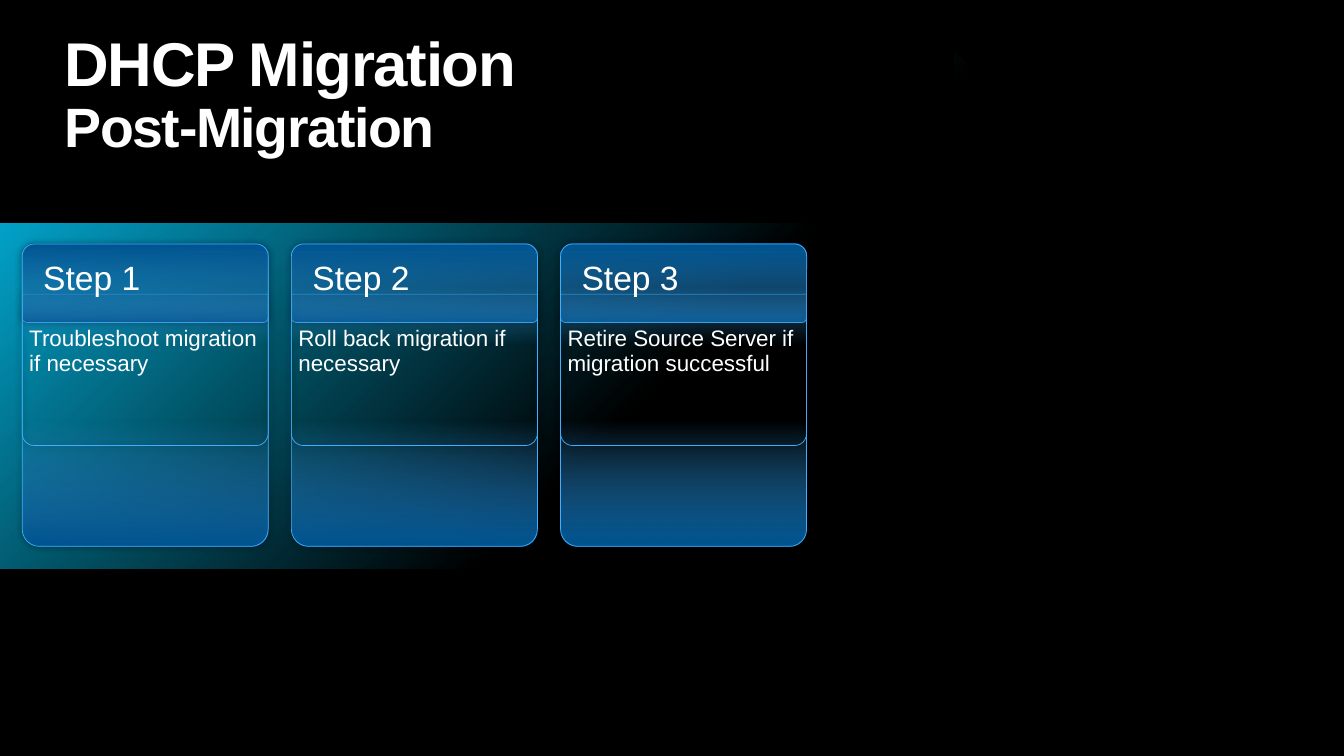
from lxml import etree
from pptx import Presentation
from pptx.dml.color import RGBColor
from pptx.enum.shapes import MSO_SHAPE as Shape
from pptx.enum.text import MSO_ANCHOR as Anchor
from pptx.oxml import parse_xml
from pptx.oxml.ns import nsdecls
from pptx.util import Inches, Pt

FONT = "Arial"
WHITE, BLACK, CYAN = "FFFFFF", "000000", "03C2F1"
SAND, SKY, NAVY = "FFD8A0", "40AFFF", "005490"
# Gradient stops: position in percent, colour, opacity in percent
ARROW_STOPS = [(0, BLACK, 100), (50, BLACK, 100), (100, CYAN, 100)]
GLASS_STOPS = [(0, SAND, 0), (50, SKY, 0), (100, NAVY, 100)]

STEPS = [
    ("Step 1", "Troubleshoot migration if necessary"),
    ("Step 2", "Roll back migration if necessary"),
    ("Step 3", "Retire Source Server if migration successful"),
]
CARD_LEFT, CARD_PITCH, CARD_WIDTH = 0.22, 2.67, 2.44
# Layers of a card: shape, top, height, corner, gradient angle
CARD_LAYERS = [
    (Shape.ROUND_2_SAME_RECTANGLE, 2.5, 0.7, 0.07, 270),
    (Shape.ROUND_2_SAME_RECTANGLE, 2.92, 2.5, 0.07, 270),
    (Shape.ROUNDED_RECTANGLE, 2.42, 2, 0.06, 90),
]


def rgb(value):
    return RGBColor.from_string(value)


def fill_gradient(shape, stops, angle):
    stop_xml = "".join(
        f'<a:gs pos="{pos * 1000}"><a:srgbClr val="{color}">'
        f'<a:alpha val="{opacity * 1000}"/></a:srgbClr></a:gs>'
        for pos, color, opacity in stops)
    gradient = parse_xml(
        f'<a:gradFill {nsdecls("a")} rotWithShape="1"><a:gsLst>{stop_xml}</a:gsLst>'
        f'<a:lin ang="{angle * 60000}" scaled="0"/></a:gradFill>')
    shape._element.spPr.find(".//{*}prstGeom").addnext(gradient)


def add_glow_shadow(shape):
    effects = shape._element.spPr.find("{*}effectLst")
    effects.append(parse_xml(
        f'<a:outerShdw {nsdecls("a")} blurRad="{Pt(5)}" dist="0" dir="0">'
        f'<a:srgbClr val="{BLACK}"><a:alpha val="40000"/></a:srgbClr></a:outerShdw>'))


def add_gradient_shape(slide, kind, box, adjustments, stops, angle):
    shape = slide.shapes.add_shape(kind, *map(Inches, box))
    for index, value in enumerate(adjustments):
        shape.adjustments[index] = value
    shape.shadow.inherit = False
    fill_gradient(shape, stops, angle)
    return shape


def add_text(slide, box, lines, margins=(0, 0), line_spacing=None, bold=False):
    """Each line is a pair of text and size; lines share one paragraph."""
    frame = slide.shapes.add_textbox(*map(Inches, box)).text_frame
    frame.word_wrap = True
    frame.vertical_anchor = Anchor.TOP
    frame.margin_left = frame.margin_right = Inches(margins[0])
    frame.margin_top = frame.margin_bottom = Inches(margins[1])
    paragraph = frame.paragraphs[0]
    paragraph.line_spacing = line_spacing
    paragraph.font.name = FONT
    paragraph.font.bold = bold
    paragraph.font.color.rgb = rgb(WHITE)
    for index, (text, size) in enumerate(lines):
        if index:
            paragraph.add_line_break()
        run = paragraph.add_run()
        run.text = text
        run.font.size = Pt(size)
    return paragraph


def add_title(slide):
    title = add_text(slide, (0.64, 0.33, 12.36, 0.99),
                     [("DHCP Migration", 44.1), ("Post-Migration", 39.6)],
                     line_spacing=0.9, bold=True)
    for run in title.runs:
        run.font._element.set("spc", "-100")


def add_card(slide, left, heading, detail):
    for kind, top, height, corner, angle in CARD_LAYERS:
        layer = add_gradient_shape(slide, kind, (left, top, CARD_WIDTH, height),
                                   [corner], GLASS_STOPS, angle)
        layer.rotation = 180
        layer.line.color.rgb = rgb(SKY)
        layer.line.width = Pt(0.5)
        add_glow_shadow(layer)
    add_text(slide, (left + 0.11, 2.5, 1.96, 0.5), [(heading, 24)], margins=(0.1, 0.05))
    add_text(slide, (left + 0.07, 3.25, 2.36, 0.78), [(detail, 16)], line_spacing=0.9)


def main():
    prs = Presentation()
    prs.slide_width, prs.slide_height = Inches(13.33), Inches(7.5)
    slide = prs.slides.add_slide(prs.slide_layouts[6])
    slide.background.fill.solid()
    slide.background.fill.fore_color.rgb = rgb(BLACK)

    # Arrow behind the steps
    arrow = add_gradient_shape(slide, Shape.RIGHT_ARROW, (0, 0.5, 12.89, 6.86),
                               [0.5, 0.5], ARROW_STOPS, 225)
    arrow.line.fill.background()

    # Title and step cards
    add_title(slide)
    for index, (heading, detail) in enumerate(STEPS):
        add_card(slide, CARD_LEFT + index * CARD_PITCH, heading, detail)

    prs.save("out.pptx")


if __name__ == "__main__":
    main()
